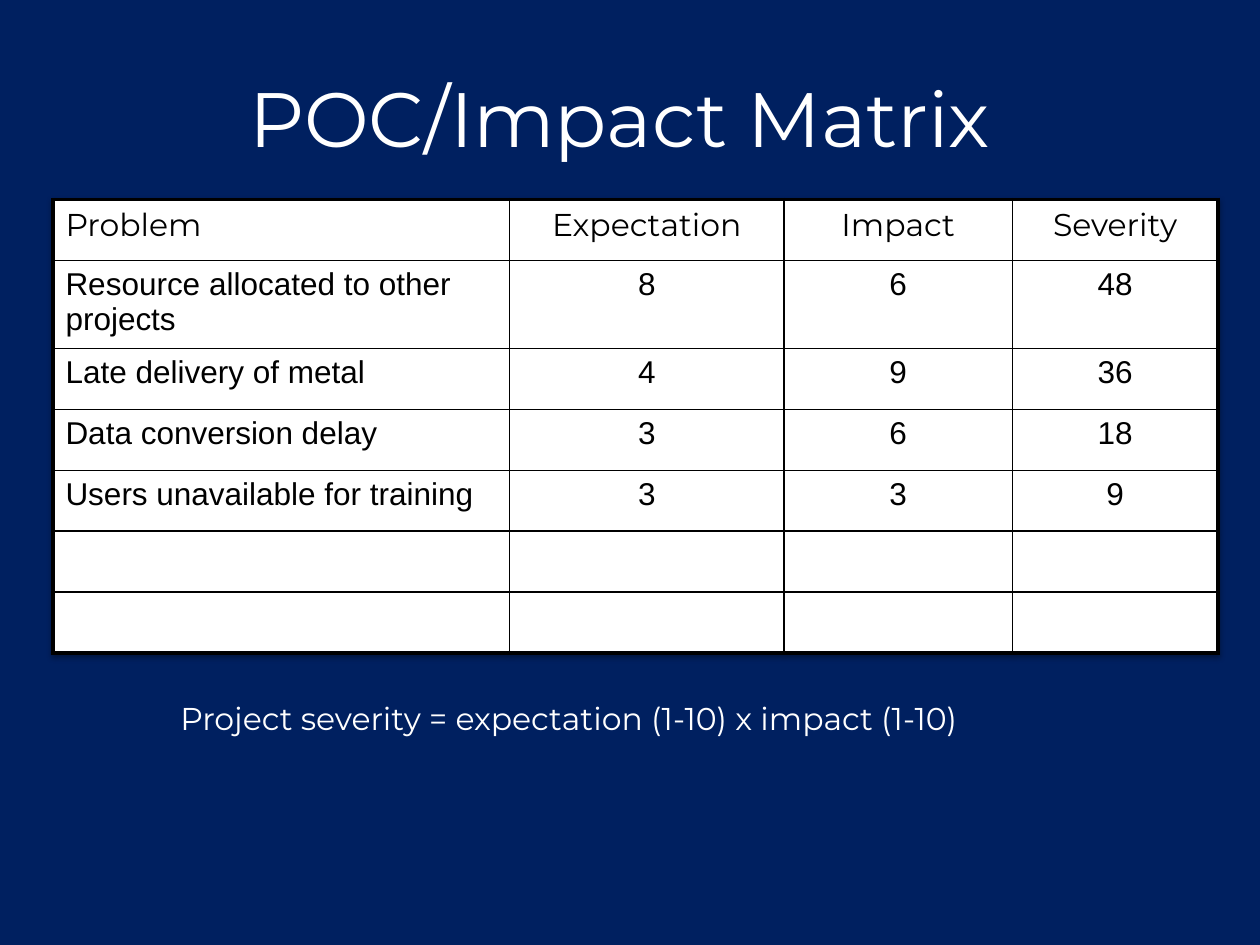
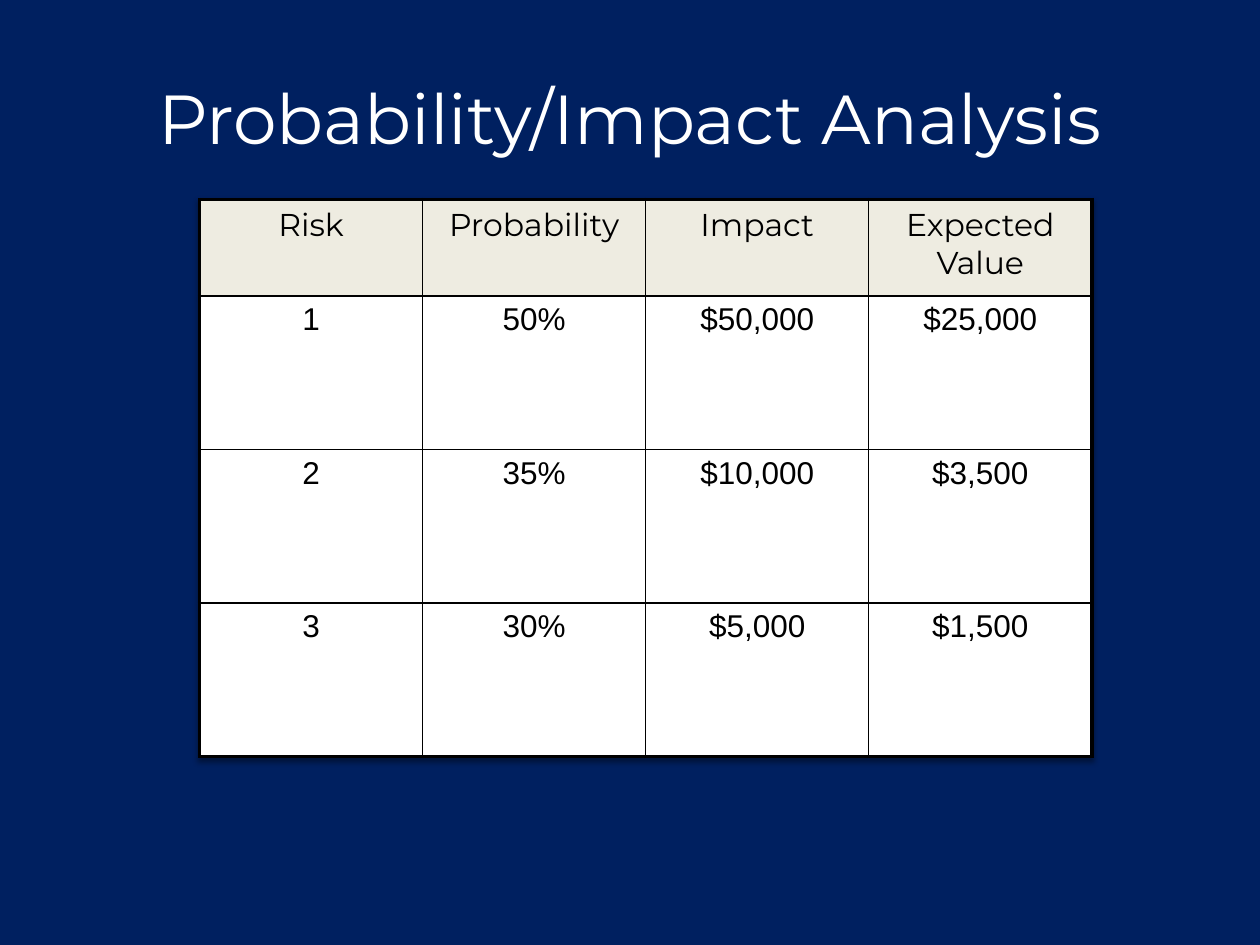
import lxml.etree
import pptx
import pptx.dml.color
import pptx.enum.text
import pptx.oxml
import pptx.oxml.ns
import pptx.util

Pt = pptx.util.Pt
RGBColor = pptx.dml.color.RGBColor
Align = pptx.enum.text.PP_ALIGN
Anchor = pptx.enum.text.MSO_ANCHOR
AutoSize = pptx.enum.text.MSO_AUTO_SIZE
qn = pptx.oxml.ns.qn

NAVY = RGBColor(0x00, 0x20, 0x60)
WHITE = RGBColor(0xFF, 0xFF, 0xFF)
BLACK = RGBColor(0x00, 0x00, 0x00)
CREAM = RGBColor(0xEE, 0xEC, 0xE1)

HEADING_FONT = "Montserrat"
BODY_FONT = "Arial"
BODY_SIZE = 18
OUTER_BORDER = 2.25
INNER_BORDER = 1
TABLE_TOP = 114

TABLE_SHADOW = (
    f'<a:effectLst {pptx.oxml.ns.nsdecls("a")}>'
    '<a:outerShdw blurRad="40000" dist="20000" dir="5400000" rotWithShape="0">'
    '<a:srgbClr val="000000"><a:alpha val="38000"/></a:srgbClr>'
    '</a:outerShdw></a:effectLst>'
)


class Deck:
    """Holds the shared style and the slide being built."""

    def __init__(self):
        self.presentation = pptx.Presentation()
        self.presentation.slide_width = Pt(720)
        self.presentation.slide_height = Pt(540)
        self.slide = None

    def add_slide(self, title, title_size):
        blank_layout = self.presentation.slide_layouts[6]
        self.slide = self.presentation.slides.add_slide(blank_layout)
        background = self.slide.background.fill
        background.solid()
        background.fore_color.rgb = NAVY
        frame = self.add_text(title, 36, 21.6, 648, 90, title_size, Align.CENTER)
        frame.vertical_anchor = Anchor.MIDDLE

    def style_paragraph(self, paragraph, font_name, size, color, alignment):
        paragraph.alignment = alignment
        paragraph.font.name = font_name
        paragraph.font.size = Pt(size)
        paragraph.font.color.rgb = color

    def add_text(self, text, left, top, width, height, size, alignment):
        box = self.slide.shapes.add_textbox(Pt(left), Pt(top), Pt(width), Pt(height))
        frame = box.text_frame
        frame.word_wrap = True
        frame.text = text
        self.style_paragraph(frame.paragraphs[0], HEADING_FONT, size, WHITE, alignment)
        return frame

    def add_caption(self, text, left, top, width, height):
        frame = self.add_text(text, left, top, width, height, BODY_SIZE, Align.LEFT)
        frame.word_wrap = False
        frame.auto_size = AutoSize.SHAPE_TO_FIT_TEXT

    def add_border(self, cell, side, width):
        properties = cell._tc.get_or_add_tcPr()
        line = lxml.etree.SubElement(properties, qn(f"a:ln{side}"), w=str(Pt(width)))
        fill = lxml.etree.SubElement(line, qn("a:solidFill"))
        lxml.etree.SubElement(fill, qn("a:srgbClr"), val=str(BLACK))

    def add_table(self, rows, left, column_widths, row_heights,
                  header_color, first_alignment):
        frame = self.slide.shapes.add_table(
            len(rows), len(column_widths), Pt(left), Pt(TABLE_TOP),
            Pt(sum(column_widths)), Pt(sum(row_heights)))
        table = frame.table
        table.first_row = False
        table.horz_banding = False
        table._tbl.tblPr.insert(0, pptx.oxml.parse_xml(TABLE_SHADOW))
        for column, width in zip(table.columns, column_widths):
            column.width = Pt(width)
        for row, height in zip(table.rows, row_heights):
            row.height = Pt(height)

        last_row, last_column = len(rows) - 1, len(column_widths) - 1
        for row_index, texts in enumerate(rows):
            is_header = row_index == 0
            for column_index, text in enumerate(texts):
                cell = table.cell(row_index, column_index)
                # Thick lines run only around the outside of the table
                outer_sides = {
                    "L": column_index == 0,
                    "R": column_index == last_column,
                    "T": is_header,
                    "B": row_index == last_row,
                }
                for side, is_outer in outer_sides.items():
                    self.add_border(cell, side, OUTER_BORDER if is_outer else INNER_BORDER)
                cell.fill.solid()
                cell.fill.fore_color.rgb = header_color if is_header else WHITE

                cell.text = text
                paragraph = cell.text_frame.paragraphs[0]
                self.style_paragraph(
                    paragraph, HEADING_FONT if is_header else BODY_FONT, BODY_SIZE,
                    BLACK, first_alignment if column_index == 0 else Align.CENTER)
                # Space before is a share of the line height
                spacing = lxml.etree.Element(qn("a:spcBef"))
                lxml.etree.SubElement(spacing, qn("a:spcPct"), val="20000")
                paragraph._p.get_or_add_pPr().insert(0, spacing)


def main():
    deck = Deck()

    # Severity matrix; the trailing space is part of the title
    deck.add_slide("POC/Impact Matrix ", 44)
    problems = [
        ("Problem", "Expectation", "Impact", "Severity"),
        ("Resource allocated to other projects", "8", "6", "48"),
        ("Late delivery of metal", "4", "9", "36"),
        ("Data conversion delay", "3", "6", "18"),
        ("Users unavailable for training", "3", "3", "9"),
        ("", "", "", ""),
        ("", "", "", ""),
    ]
    deck.add_table(problems, 30.25, [261, 156.75, 130.5, 117.5],
                   [34.8] * len(problems), WHITE, Align.LEFT)
    deck.add_caption("Project severity = expectation (1-10) x impact (1-10)",
                     96, 396, 530, 29)

    # Expected value of each risk
    deck.add_slide("Probability/Impact Analysis", 39.6)
    risks = [
        ("Risk", "Probability", "Impact", "Expected Value"),
        ("1", "50%", "$50,000", "$25,000"),
        ("2", "35%", "$10,000", "$3,500"),
        ("3", "30%", "$5,000", "$1,500"),
    ]
    deck.add_table(risks, 114, [127.5] * 4, [55.2] + [87.7] * 3, CREAM, Align.CENTER)

    deck.presentation.save("out.pptx")


if __name__ == "__main__":
    main()
